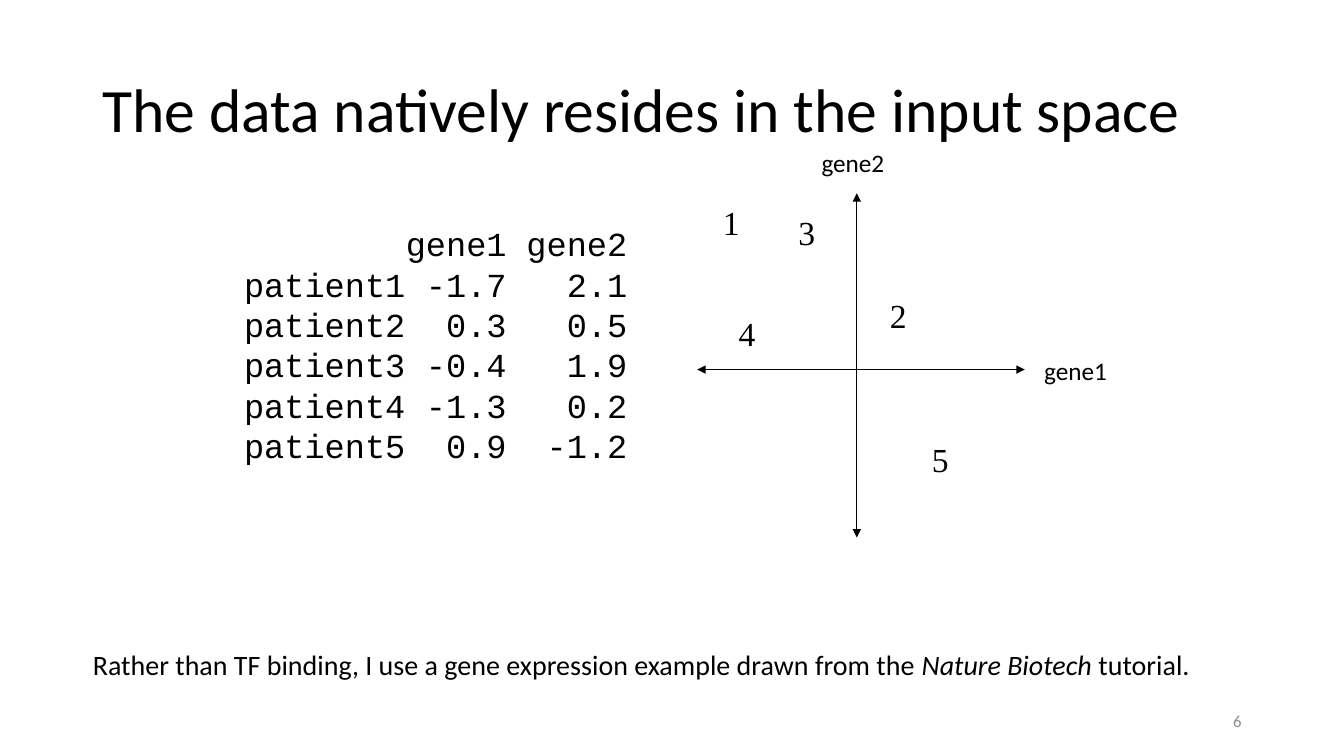
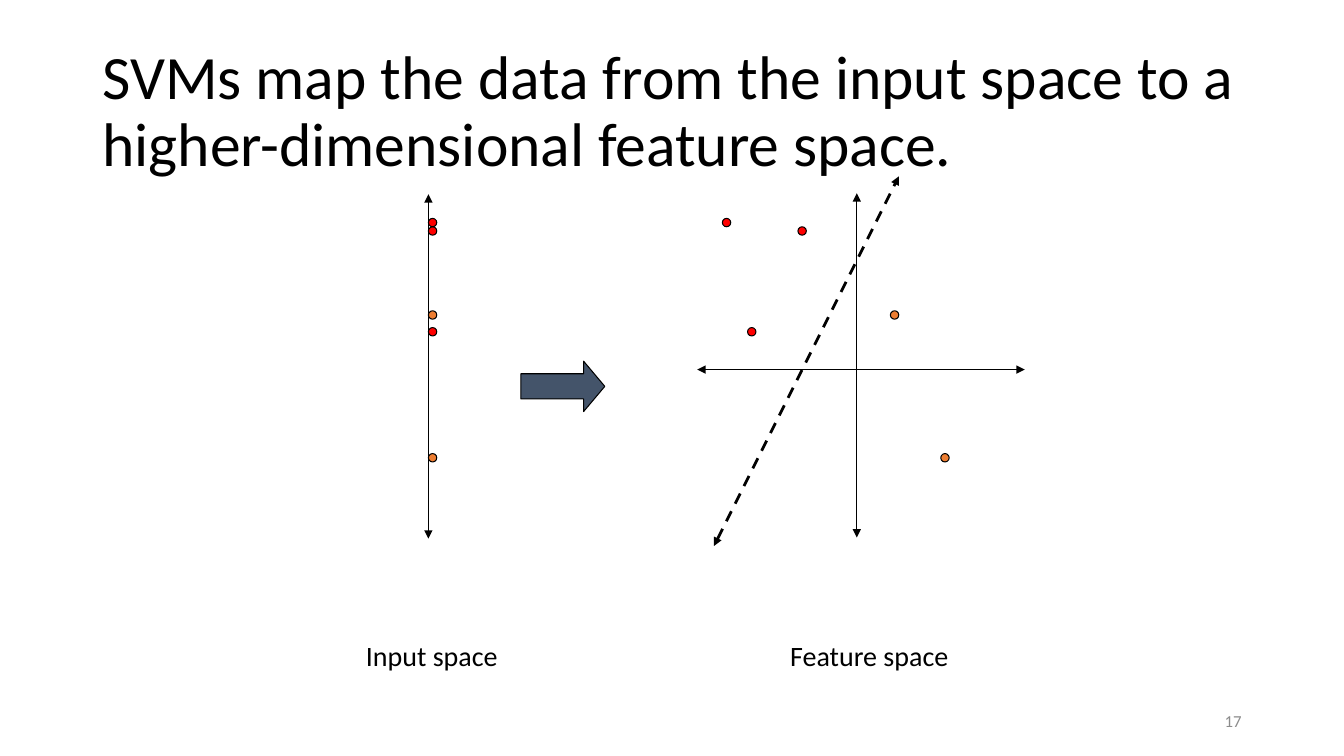
import pptx
import pptx.util
import pptx.dml.color
import pptx.enum.dml
import pptx.enum.shapes
import pptx.enum.text
import pptx.oxml
import pptx.oxml.ns
import lxml.etree

PX = 9525  # 96 px to the inch
COLORS = {
    "black": "000000",
    "white": "FFFFFF",
    "gray": "8C8C8C",
    "red": "FF0000",
    "orange": "ED7D31",
    "slate": "44546A",
}
ALIGN = pptx.enum.text.PP_ALIGN
ANCHOR = pptx.enum.text.MSO_ANCHOR
SHAPE = pptx.enum.shapes.MSO_SHAPE


def rgb(name):
    return pptx.dml.color.RGBColor.from_string(COLORS[name])


def add_text(slide, text, box, size=20, font="Calibri", color="black", align=ALIGN.LEFT,
             anchor=ANCHOR.TOP, wrap=False, spacing=1.0, italic="", tabs=()):
    """Add lines of text; the part equal to italic is slanted, tabs are right stops in px."""
    frame = slide.shapes.add_textbox(*(v * PX for v in box)).text_frame
    frame.word_wrap = wrap
    frame.vertical_anchor = anchor
    if not wrap:
        frame.auto_size = pptx.enum.text.MSO_AUTO_SIZE.SHAPE_TO_FIT_TEXT
    for i, line in enumerate(text.split("\n")):
        paragraph = frame.add_paragraph() if i else frame.paragraphs[0]
        paragraph.alignment = align
        paragraph.line_spacing = spacing
        if tabs:
            tab_list = lxml.etree.SubElement(paragraph._p.get_or_add_pPr(), pptx.oxml.ns.qn("a:tabLst"))
            for stop in tabs:
                lxml.etree.SubElement(tab_list, pptx.oxml.ns.qn("a:tab"), pos=str(stop * PX), algn="r")
        before, slanted, after = line.partition(italic) if italic else (line, "", "")
        for part in filter(None, (before, slanted, after)):
            run = paragraph.add_run()
            run.text = part
            run.font.name = font
            run.font.size = pptx.util.Pt(size)
            run.font.color.rgb = rgb(color)
            run.font.italic = part == italic


def add_double_arrow(slide, x1, y1, x2, y2, width=0.75, dash=None):
    arrow = slide.shapes.add_connector(pptx.enum.shapes.MSO_CONNECTOR.STRAIGHT,
                                       x1 * PX, y1 * PX, x2 * PX, y2 * PX)
    arrow.line.color.rgb = rgb("black")
    arrow.line.width = pptx.util.Pt(width)
    if dash:
        arrow.line.dash_style = dash
    for end in ("a:headEnd", "a:tailEnd"):
        lxml.etree.SubElement(arrow.get_or_add_ln(), pptx.oxml.ns.qn(end), type="triangle")
    lxml.etree.SubElement(arrow._element.spPr, pptx.oxml.ns.qn("a:effectLst"))


deck = pptx.Presentation()
deck.slide_width = 1280 * PX
deck.slide_height = 720 * PX

# Title, slide number and the gene1/gene2 axes are common to both slides
pages = []
for title, number in (
    ("The data natively resides in the input space", "6"),
    ("SVMs map the data from the input space to a higher-dimensional feature space.", "17"),
):
    slide = deck.slides.add_slide(deck.slide_layouts[6])
    slide.background.fill.solid()
    slide.background.fill.fore_color.rgb = rgb("white")
    add_text(slide, title, (88, 38, 1104, 139), size=44, anchor=ANCHOR.MIDDLE, wrap=True, spacing=0.9)
    add_double_arrow(slide, 816, 184, 816, 512)
    add_double_arrow(slide, 664, 352, 976, 352)
    add_text(slide, number, (904, 667, 288, 38), size=12, color="gray",
             align=ALIGN.RIGHT, anchor=ANCHOR.MIDDLE, wrap=True)
    pages.append(slide)
input_page, feature_page = pages

# Expression values and the patients plotted by number
expression = [
    ("", "gene1", "gene2"),
    ("patient1", "-1.7", "2.1"),
    ("patient2", "0.3", "0.5"),
    ("patient3", "-0.4", "1.9"),
    ("patient4", "-1.3", "0.2"),
    ("patient5", "0.9", "-1.2"),
]
add_text(input_page, "\n".join("\t".join(row) for row in expression), (223, 208, 390, 242),
         size=24, font="Courier New", wrap=True, tabs=(250, 365))
patient_places = [(679, 188), (838, 276), (751, 197), (694, 293), (878, 413)]
for patient, (x, y) in enumerate(patient_places, start=1):
    add_text(input_page, str(patient), (x, y, 35, 48), size=24, font="Times New Roman")
add_text(input_page, "gene1", (985, 334, 86, 38), size=18)
add_text(input_page, "gene2", (773, 136, 86, 38), size=18)
add_text(input_page, "Rather than TF binding, I use a gene expression example drawn from the Nature Biotech tutorial.",
         (79, 612, 1080, 42), italic="Nature Biotech ")

# The same samples on one axis (input space) and on two (feature space)
add_double_arrow(feature_page, 680, 520, 856, 168, width=2, dash=pptx.enum.dml.MSO_LINE.DASH)
input_axis = 408
add_double_arrow(feature_page, input_axis, 185, input_axis, 513)
samples = [
    (712, 312, "red"),
    (760, 216, "red"),
    (688, 208, "red"),
    (848, 296, "orange"),
    (896, 432, "orange"),
]
marks = [(SHAPE.OVAL, x, y, 8, 8, color) for x, y, color in samples]
marks += [(SHAPE.OVAL, input_axis, y, 8, 8, color) for _, y, color in samples]
marks.append((SHAPE.RIGHT_ARROW, 496, 344, 80, 48, "slate"))
for kind, x, y, width, height, color in marks:
    mark = feature_page.shapes.add_shape(kind, x * PX, y * PX, width * PX, height * PX)
    mark.shadow.inherit = False
    mark.fill.solid()
    mark.fill.fore_color.rgb = rgb(color)
    mark.line.color.rgb = rgb("black")
    mark.line.width = pptx.util.Pt(0.75)
    if kind == SHAPE.RIGHT_ARROW:
        mark.adjustments[1] = 0.42
add_text(feature_page, "Input space", (339, 603, 146, 42))
add_text(feature_page, "Feature space", (743, 603, 172, 42))

deck.save("out.pptx")
